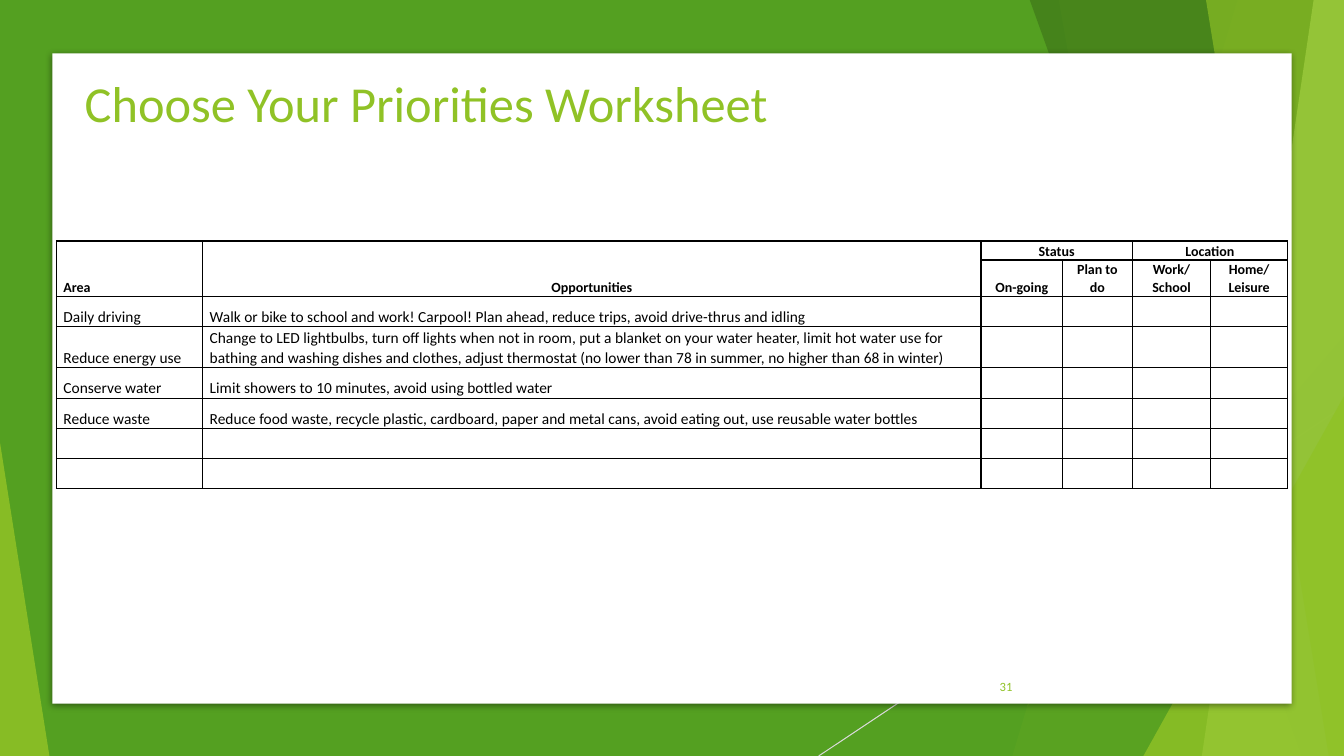
from lxml import etree
from pptx import Presentation
from pptx.dml.color import RGBColor
from pptx.enum.shapes import MSO_CONNECTOR, MSO_SHAPE
from pptx.enum.text import MSO_ANCHOR, MSO_AUTO_SIZE, PP_ALIGN
from pptx.oxml import parse_xml
from pptx.oxml.ns import nsdecls, qn
from pptx.util import Inches, Pt

RECTANGLE, TRIANGLE = MSO_SHAPE.RECTANGLE, MSO_SHAPE.ISOSCELES_TRIANGLE
STRAIGHT = MSO_CONNECTOR.STRAIGHT
TOP, MIDDLE, BOTTOM = MSO_ANCHOR.TOP, MSO_ANCHOR.MIDDLE, MSO_ANCHOR.BOTTOM
LEFT, CENTER, RIGHT = PP_ALIGN.LEFT, PP_ALIGN.CENTER, PP_ALIGN.RIGHT
NO_AUTOFIT = MSO_AUTO_SIZE.NONE

WIDTH, HEIGHT = 13.33, 7.5
FONT = "Calibri"
LIME, GREEN, DARK, PALE = "90C226", "54A021", "3F7819", "C0E474"
WHITE, BLACK, GREY = "FFFFFF", "000000", "D9D9D9"

# Bands reaching the right edge: top x, bottom x, colour, opacity in percent
BANDS_BEHIND = [(12.28, 10.04, LIME, 30), (10.5, 11.83, LIME, 20)]
BANDS_FRONT = [(10.21, 12.91, DARK, 70), (13.03, 11.92, PALE, 70),
               (11.96, 13.18, LIME, 65)]

COLUMN_WIDTHS = [1.45, 7.72, 0.81, 0.69, 0.78, 0.76]
ROW_HEIGHTS = [0.19, 0.36, 0.3, 0.41, 0.3, 0.3, 0.3, 0.3]
HEADER_ROWS = 2
MERGES = [(0, 0, 1, 0), (0, 1, 1, 1), (0, 2, 0, 3), (0, 4, 0, 5)]
WORKSHEET = [
    ["Area", "Opportunities", "Status", "", "Location", ""],
    ["", "", "On-going", "Plan to do", "Work/ School", "Home/\nLeisure"],
    ["Daily driving",
     "Walk or bike to school and work! Carpool! Plan ahead, reduce trips, "
     "avoid drive-thrus and idling"],
    ["Reduce energy use",
     "Change to LED lightbulbs, turn off lights when not in room, put a "
     "blanket on your water heater, limit hot water use for bathing and "
     "washing dishes and clothes, adjust thermostat (no lower than 78 in "
     "summer, no higher than 68 in winter)"],
    ["Conserve water", "Limit showers to 10 minutes, avoid using bottled water"],
    ["Reduce waste",
     "Reduce food waste, recycle plastic, cardboard, paper and metal cans, "
     "avoid eating out, use reusable water bottles"],
]


def rgb(value):
    return RGBColor.from_string(value)


def paint(shape, color, opacity=100):
    shape.shadow.inherit = False
    shape.line.fill.background()
    shape.fill.solid()
    shape.fill.fore_color.rgb = rgb(color)
    if opacity < 100:
        tint = shape.fill._xPr.find(qn("a:solidFill"))[0]
        etree.SubElement(tint, qn("a:alpha")).set("val", str(opacity * 1000))


def add_preset(slide, kind, left, top, width, height, color, opacity=100):
    shape = slide.shapes.add_shape(
        kind, Inches(left), Inches(top), Inches(width), Inches(height))
    paint(shape, color, opacity)
    return shape


def add_triangle(slide, left, top, width, height, color, opacity, apex):
    triangle = add_preset(slide, TRIANGLE, left, top, width, height, color, opacity)
    triangle.adjustments[0] = apex


def add_band(slide, top_x, bottom_x, color, opacity):
    outline = slide.shapes.build_freeform(Inches(top_x), Inches(-0.01))
    corners = [(WIDTH, -0.01), (WIDTH, HEIGHT), (bottom_x, HEIGHT)]
    outline.add_line_segments([(Inches(x), Inches(y)) for x, y in corners])
    paint(outline.convert_to_shape(), color, opacity)


def add_diagonal(slide):
    diagonal = slide.shapes.add_connector(
        STRAIGHT, Inches(WIDTH), Inches(4.03), Inches(8.12), Inches(HEIGHT))
    diagonal.line.color.rgb = rgb(GREY)
    diagonal.line.width = Pt(0.75)
    etree.SubElement(diagonal._element.spPr, qn("a:effectLst"))


def add_backdrop(slide):
    add_preset(slide, RECTANGLE, 0, 0, WIDTH, HEIGHT, GREEN)
    add_diagonal(slide)
    for band in BANDS_BEHIND:
        add_band(slide, *band)
    add_triangle(slide, 9.77, 3.33, 3.56, 4.17, GREEN, 72, 1)
    for band in BANDS_FRONT:
        add_band(slide, *band)
    add_triangle(slide, 11.34, 3.93, 1.99, 3.57, LIME, 80, 1)
    add_triangle(slide, 0, 4.39, 0.49, 3.11, LIME, 85, 0)


def add_sheet(slide):
    """Add the white page with its soft shadow."""
    sheet = add_preset(slide, RECTANGLE, 0.52, 0.53, 12.29, 6.45, WHITE)
    effects = sheet._element.spPr.find(qn("a:effectLst"))
    effects.append(parse_xml(
        f'<a:outerShdw {nsdecls("a")} blurRad="{Pt(5)}" dist="{Pt(1.4)}" '
        f'dir="5400000" rotWithShape="0"><a:srgbClr val="{BLACK}">'
        '<a:alpha val="43000"/></a:srgbClr></a:outerShdw>'))


def format_text(frame, size, color, align, bold=False):
    for paragraph in frame.paragraphs:
        paragraph.alignment = align
        for run in paragraph.runs:
            run.font.name = FONT
            run.font.size = Pt(size)
            run.font.bold = bold
            run.font.color.rgb = rgb(color)


def place_title(slide):
    title = slide.shapes.title
    title.left, title.top = Inches(0.74), Inches(0.67)
    title.width, title.height = Inches(9.4), Inches(1.44)
    frame = title.text_frame
    frame.text = "Choose Your Priorities Worksheet"
    frame.auto_size = NO_AUTOFIT
    frame.vertical_anchor = TOP
    format_text(frame, 36, LIME, LEFT)
    slide.shapes._spTree.append(title._element)


def add_page_number(slide):
    frame = slide.shapes.add_textbox(
        Inches(9.39), Inches(6.61), Inches(0.75), Inches(0.4)).text_frame
    frame.word_wrap = True
    frame.vertical_anchor = MIDDLE
    frame.text = "31"
    format_text(frame, 9, LIME, RIGHT)


def add_borders(cell):
    properties = cell._tc.get_or_add_tcPr()
    for side in ("lnL", "lnR", "lnT", "lnB"):
        properties.append(parse_xml(
            f'<a:{side} {nsdecls("a")} w="{Pt(1)}"><a:solidFill>'
            f'<a:srgbClr val="{BLACK}"/></a:solidFill></a:{side}>'))


def format_cell(cell, text, is_header, align):
    add_borders(cell)
    cell.fill.background()
    cell.margin_left = cell.margin_right = Inches(0.07)
    cell.margin_top = cell.margin_bottom = 0
    cell.vertical_anchor = BOTTOM
    size = 10 if is_header else 11
    cell.text_frame.text = text
    format_text(cell.text_frame, size, BLACK, align, is_header)
    for paragraph in cell.text_frame.paragraphs:
        paragraph.line_spacing = 1.07
        if not paragraph.runs:
            paragraph._p.get_or_add_endParaRPr().set("sz", str(size * 100))


def add_worksheet(slide):
    table = slide.shapes.add_table(
        len(ROW_HEIGHTS), len(COLUMN_WIDTHS), Inches(0.56), Inches(2.39),
        Inches(sum(COLUMN_WIDTHS)), Inches(sum(ROW_HEIGHTS))).table
    table.first_row = table.horz_banding = False
    for column, width in zip(table.columns, COLUMN_WIDTHS):
        column.width = Inches(width)
    for r, height in enumerate(ROW_HEIGHTS):
        table.rows[r].height = Inches(height)
        texts = WORKSHEET[r] if r < len(WORKSHEET) else []
        is_header = r < HEADER_ROWS
        for c in range(len(COLUMN_WIDTHS)):
            text = texts[c] if c < len(texts) else ""
            align = CENTER if is_header and c > 0 else LEFT
            format_cell(table.cell(r, c), text, is_header, align)
    for top, left, bottom, right in MERGES:
        table.cell(top, left).merge(table.cell(bottom, right))


def main():
    presentation = Presentation()
    presentation.slide_width = Inches(WIDTH)
    presentation.slide_height = Inches(HEIGHT)
    slide = presentation.slides.add_slide(presentation.slide_layouts[5])
    add_backdrop(slide)
    add_sheet(slide)
    place_title(slide)
    add_page_number(slide)
    add_worksheet(slide)
    presentation.save("out.pptx")


if __name__ == "__main__":
    main()
